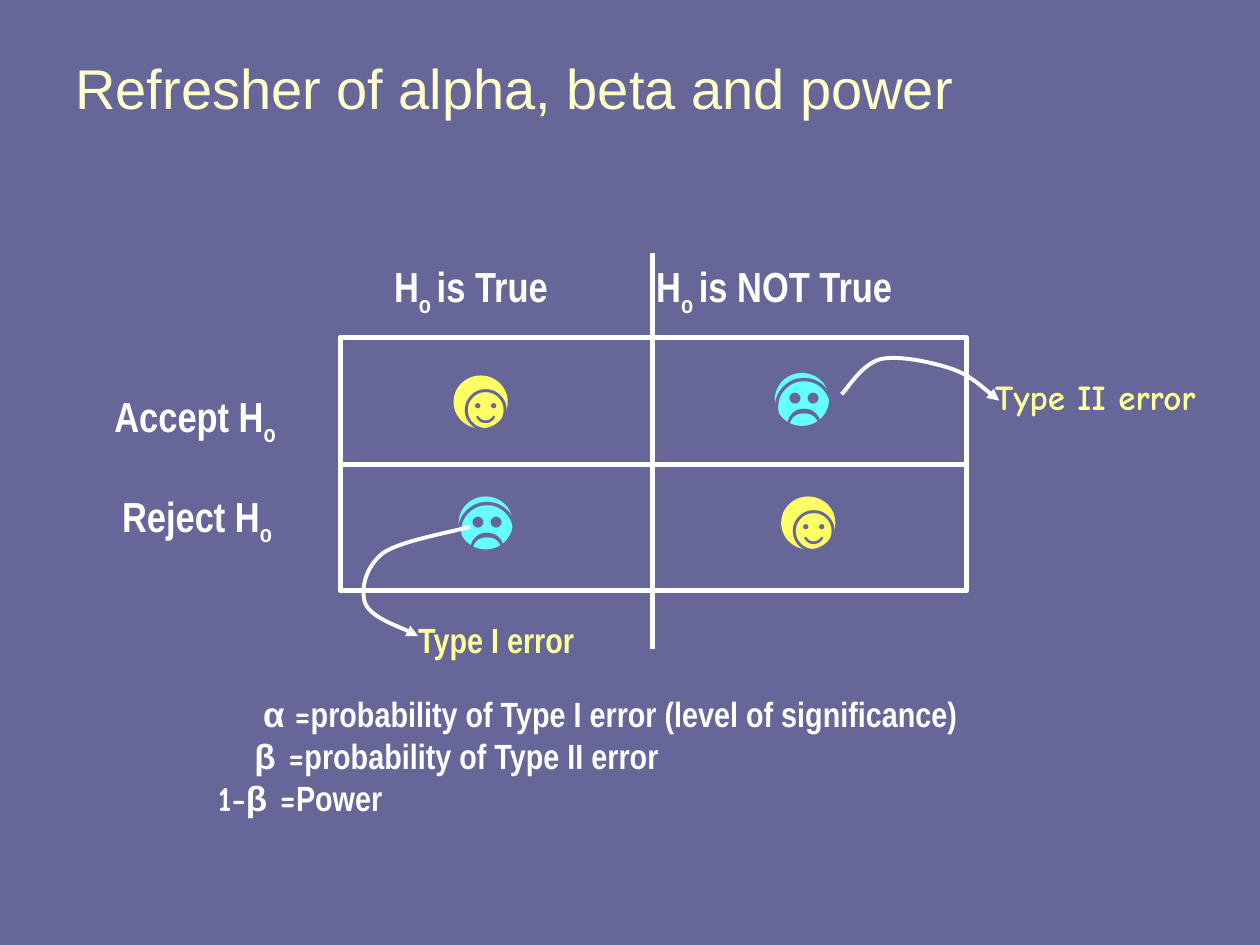
"""Build a slide that recalls alpha, beta and power with a decision grid."""
from lxml import etree
from pptx import Presentation
from pptx.dml.color import RGBColor
from pptx.enum.shapes import MSO_CONNECTOR, MSO_SHAPE
from pptx.enum.text import MSO_ANCHOR
from pptx.oxml.ns import qn
from pptx.util import Inches, Pt

STRAIGHT = MSO_CONNECTOR.STRAIGHT
OVAL, RECTANGLE = MSO_SHAPE.OVAL, MSO_SHAPE.RECTANGLE
MIDDLE, TOP = MSO_ANCHOR.MIDDLE, MSO_ANCHOR.TOP
SANS, NARROW, COMIC = "Arial", "Arial Narrow", "Comic Neue"

COLORS = {
    "background": "666699", "title": "FFFFCC", "text": "FFFFFF",
    "error": "FFFF99", "right": "FFFF66", "wrong": "66FFFF",
}

TITLE = "Refresher of alpha, beta and power"
FACES = [
    (3.6, 2.98, "☺", "right"), (6.2, 3.94, "☺", "right"),
    (3.64, 3.94, "☹", "wrong"), (6.15, 2.96, "☹", "wrong"),
]
ERRORS = [
    ("Type I error", NARROW, (3.22, 4.86, 2.11, 0.43),
     [(3.73, 4.18), (3.61, 4.22), (3.18, 4.29), (3.04, 4.39), (2.9, 4.5),
      (2.86, 4.68), (2.9, 4.79), (2.95, 4.9), (3.24, 5), (3.32, 5.05)]),
    ("Type II error", COMIC, (7.8, 2.93, 2.2, 0.43),
     [(6.68, 3.13), (6.73, 3.08), (6.84, 2.89), (6.99, 2.85), (7.13, 2.82),
      (7.37, 2.87), (7.53, 2.92), (7.69, 2.97), (7.85, 3.12), (7.93, 3.18)]),
]
DEFINITIONS = [
    (0.46, [("α ", SANS), ("=", COMIC),
            ("probability of Type I error (level of significance)", NARROW)]),
    (0.39, [("β", SANS), (" =", COMIC), ("probability of Type II error", NARROW)]),
    (0.1, [("1-", COMIC), ("β", SANS), (" =", COMIC), ("Power", NARROW)]),
]
HEADINGS = [
    ((0.81, 3.05, 1.5, 0.5), "Accept H", "o", ""),
    ((0.87, 3.84, 1.41, 0.5), "Reject H", "o", ""),
    ((3.03, 2.02, 1.46, 0.5), "H", "o ", "is True"),
    ((5.11, 2.02, 2.08, 0.5), "H", "o ", "is NOT True"),
]
GRID = (2.7, 2.68, 4.97, 2.01)
DIVIDER = (5.18, 2.01, 5.18, 5.15)


def color(name):
    return RGBColor.from_string(COLORS[name])


def add_span(para, text, font, size, name, bold=True):
    span = para.add_run()
    span.text = text
    span.font.name, span.font.size, span.font.bold = font, Pt(size), bold
    span.font.color.rgb = color(name)
    return span


def add_box(shapes, place, wrap=False, anchor=TOP):
    box = shapes.add_textbox(*map(Inches, place))
    box.text_frame.word_wrap = wrap
    box.text_frame.vertical_anchor = anchor
    return box.text_frame


def set_line(shape, width):
    shape.line.color.rgb = color("text")
    shape.line.width = Pt(width)


def add_face(page, left, top, symbol, kind):
    group = page.shapes.add_group_shape()
    disc = group.shapes.add_shape(OVAL, *map(Inches, (left, top, 0.43, 0.42)))
    disc.shadow.inherit = False
    disc.fill.solid()
    disc.fill.fore_color.rgb = color(kind)
    disc.line.fill.background()
    frame = add_box(group.shapes, (left - 0.12, top - 0.17, 0.67, 0.77))
    add_span(frame.paragraphs[0], symbol, SANS, 40, "background")


def add_curved_arrow(page, points):
    corners = [(Inches(x), Inches(y)) for x, y in points]
    builder = page.shapes.build_freeform(*corners[0])
    builder.add_line_segments(corners[1:], close=False)
    arrow = builder.convert_to_shape()
    arrow.shadow.inherit = False
    arrow.fill.background()
    set_line(arrow, 2.25)
    segments = list(arrow._element.iter(qn("a:lnTo")))
    outline = segments[0].getparent()
    for start in range(0, len(segments), 3):
        curve = etree.SubElement(outline, qn("a:cubicBezTo"))
        for segment in segments[start:start + 3]:
            curve.append(segment[0])
            outline.remove(segment)
    line = arrow._element.spPr.find(qn("a:ln"))
    etree.SubElement(line, qn("a:tailEnd"), type="triangle")


def add_rule(page, ends):
    rule = page.shapes.add_connector(STRAIGHT, *map(Inches, ends))
    set_line(rule, 3)
    etree.SubElement(rule._element.spPr, qn("a:effectLst"))
    return rule


def add_grid(page):
    grid = page.shapes.add_shape(RECTANGLE, *map(Inches, GRID))
    grid.shadow.inherit = False
    grid.fill.background()
    set_line(grid, 3)
    left, top, width, height = GRID
    middle = top + height / 2
    row_rule = add_rule(page, (left, middle, left + width, middle))
    row_rule.begin_connect(grid, 1)
    row_rule.end_connect(grid, 3)
    add_rule(page, DIVIDER)


def main():
    deck = Presentation()
    deck.slide_width, deck.slide_height = Inches(10), Inches(7.5)
    page = deck.slides.add_slide(deck.slide_layouts[6])
    page.background.fill.solid()
    page.background.fill.fore_color.rgb = color("background")

    frame = add_box(page.shapes, (0.5, 0.3, 9, 0.78), True, MIDDLE)
    add_span(frame.paragraphs[0], TITLE, SANS, 32, "title", False)

    for face in FACES:
        add_face(page, *face)

    for text, font, place, points in ERRORS:
        add_curved_arrow(page, points)
        frame = add_box(page.shapes, place, True)
        add_span(frame.paragraphs[0], text, font, 20, "error")

    frame = add_box(page.shapes, (1.53, 5.45, 6.21, 1.1))
    for index, (indent, spans) in enumerate(DEFINITIONS):
        para = frame.add_paragraph() if index else frame.paragraphs[0]
        para._p.get_or_add_pPr().set("marL", str(Inches(indent)))
        for text, font in spans:
            add_span(para, text, font, 20, "text")

    for place, before, subscript, after in HEADINGS:
        para = add_box(page.shapes, place).paragraphs[0]
        add_span(para, before, NARROW, 24, "text")
        low = add_span(para, subscript, NARROW, 24, "text")
        low._r.get_or_add_rPr().set("baseline", "-25000")
        if after:
            add_span(para, after, NARROW, 24, "text")

    add_grid(page)
    deck.save("out.pptx")


if __name__ == "__main__":
    main()
